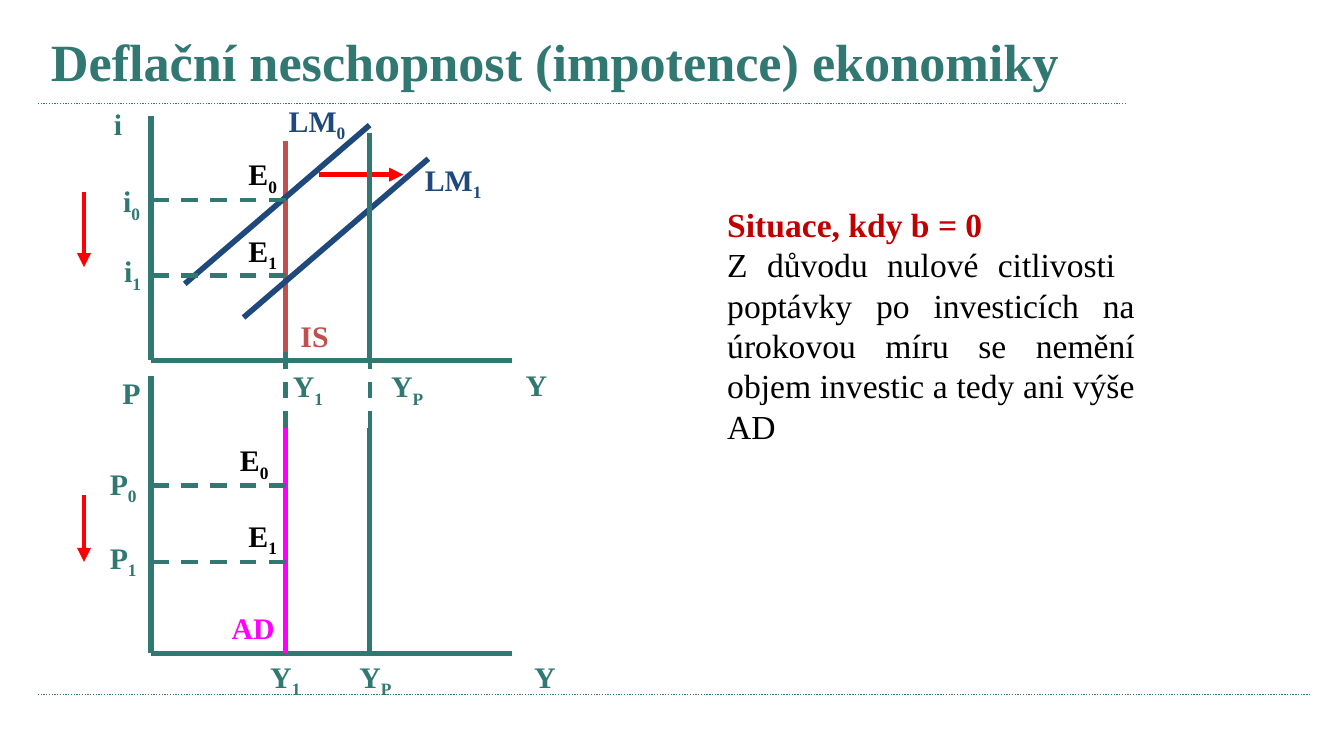
import pptx
import pptx.dml.color
import pptx.enum.dml
import pptx.enum.shapes
import pptx.enum.text
import pptx.oxml
import pptx.oxml.ns
import pptx.util

COLORS = {
    "teal": "307871", "navy": "1F497D", "brick": "C0504D", "magenta": "FF00FF",
    "red": "FF0000", "crimson": "C00000", "black": "000000",
}
FONT = "Times New Roman"
WIDTH, HEIGHT = pptx.util.Inches(10), pptx.util.Inches(5.625)
COLUMNS, ROWS = 160, 90
AXIS_X, AXIS_END, IS_X, POTENTIAL_X, CHANGE_X = 18, 61, 34, 44, 10
RATE_ZERO, RATE_TOP, PRICE_ZERO, PRICE_TOP = 42.9, 13.8, 77.8, 44.8
AD_TOP = 50.9
I0, I1, P0, P1 = 23.8, 32.8, 57.8, 66.9
DASH = pptx.enum.dml.MSO_LINE.DASH
DOTS = pptx.enum.dml.MSO_LINE.ROUND_DOT
LEFT = pptx.enum.text.PP_ALIGN.LEFT
JUSTIFY = pptx.enum.text.PP_ALIGN.JUSTIFY
TOP = pptx.enum.text.MSO_ANCHOR.TOP
MIDDLE = pptx.enum.text.MSO_ANCHOR.MIDDLE


def col(count):
    """Return the horizontal length of a number of grid columns."""
    return round(WIDTH * count / COLUMNS)


def row(count):
    """Return the vertical length of a number of grid rows."""
    return round(HEIGHT * count / ROWS)


def rgb(color):
    """Return the named colour."""
    return pptx.dml.color.RGBColor.from_string(COLORS[color])


def add_line(slide, start, end, color="teal", weight=3, dash=None, arrow=False):
    """Draw a straight line between two grid points."""
    line = slide.shapes.add_connector(
        pptx.enum.shapes.MSO_CONNECTOR.STRAIGHT,
        col(start[0]), row(start[1]), col(end[0]), row(end[1]))
    line.line.color.rgb = rgb(color)
    line.line.width = pptx.util.Pt(weight)
    if dash:
        line.line.dash_style = dash
    if arrow:
        outline = line.line._get_or_add_ln()
        outline.append(pptx.oxml.parse_xml(
            f'<a:tailEnd {pptx.oxml.ns.nsdecls("a")} type="triangle"/>'))
    line._element.spPr.append(
        pptx.oxml.parse_xml(f'<a:effectLst {pptx.oxml.ns.nsdecls("a")}/>'))


def add_text(frame, text, first=True, size=16, color="teal", bold=True, align=LEFT):
    """Write one paragraph, lowering whatever follows an underscore."""
    paragraph = frame.paragraphs[0] if first else frame.add_paragraph()
    paragraph.alignment = align
    base, _, subscript = text.partition("_")
    for part, offset in ((base, None), (subscript, "-25000")):
        if part:
            run = paragraph.add_run()
            run.text = part
            run.font.name = FONT
            run.font.size = pptx.util.Pt(size)
            run.font.bold = bold
            run.font.color.rgb = rgb(color)
            if offset:
                run._r.get_or_add_rPr().set("baseline", offset)


def add_box(slide, left, top, width, height, anchor=TOP):
    """Place a wrapping text box on the grid and return its frame."""
    frame = slide.shapes.add_textbox(
        col(left), row(top), col(width), row(height)).text_frame
    frame.word_wrap = True
    frame.vertical_anchor = anchor
    return frame


def add_label(slide, text, left, top, width=8, color="teal"):
    """Place a short diagram label."""
    add_text(add_box(slide, left, top, width, 5.9), text, color=color)


def draw_axes(slide):
    """Draw the axes of the interest rate and price panels."""
    for top, zero in ((RATE_TOP, RATE_ZERO), (PRICE_TOP, PRICE_ZERO)):
        add_line(slide, (AXIS_X, top), (AXIS_X, zero))
        add_line(slide, (AXIS_X, zero), (AXIS_END, zero))


def draw_curves(slide):
    """Draw the curves, equilibrium levels and shifts."""
    add_line(slide, (IS_X, 16.8), (IS_X, RATE_ZERO), "brick")
    for left, bottom in ((22, 33.8), (29, 37.8)):
        add_line(slide, (left, bottom), (left + 22, bottom - 18.9), "navy")
    add_line(slide, (IS_X, AD_TOP), (IS_X, PRICE_ZERO), "magenta")
    add_line(slide, (38, 20.8), (48, 20.8), "red", 2.5, arrow=True)
    for top, bottom in ((22.9, 31.8), (58.9, P1)):
        add_line(slide, (CHANGE_X, top), (CHANGE_X, bottom), "red", 2.5, arrow=True)
    for top, zero in ((15.8, RATE_ZERO), (AD_TOP, PRICE_ZERO)):
        add_line(slide, (POTENTIAL_X, top), (POTENTIAL_X, zero))
    for level in (I0, I1, P0, P1):
        add_line(slide, (IS_X, level), (AXIS_X, level), weight=2.25, dash=DASH)
    for output, top in ((IS_X, 41.8), (POTENTIAL_X, RATE_ZERO)):
        add_line(slide, (output, AD_TOP), (output, top), weight=2.25, dash=DASH)


def draw_labels(slide):
    """Label the axes, levels, equilibria and curves."""
    for text, left, top in (
            ("i", 12, 11.8), ("i_0", 13.1, 21), ("i_1", 13.2, 29.3),
            ("P", 13, 43.8), ("P_0", 11.5, 54.6), ("P_1", 11.5, 63.4),
            ("Y_1", 33.3, 43), ("Y_P", 45, 43), ("Y", 61, 42.9),
            ("Y_1", 30.6, 77.6), ("Y_P", 41.2, 77.6), ("Y", 62, 77.6)):
        add_label(slide, text, left, top)
    for text, left, top in (("E_0", 28, 17.8), ("E_1", 28, 26.9),
                            ("E_0", 27, 51.8), ("E_1", 28, 60.8)):
        add_label(slide, text, left, top, color="black")
    add_label(slide, "LM_0", 32.8, 11.4, 17, "navy")
    add_label(slide, "LM_1", 49, 18.4, 15, "navy")
    add_label(slide, "IS", 34.2, 37, color="brick")
    add_label(slide, "AD", 26, 71.8, 9, "magenta")


def main():
    """Build and save the slide."""
    deck = pptx.Presentation()
    deck.slide_width, deck.slide_height = WIDTH, HEIGHT
    slide = deck.slides.add_slide(deck.slide_layouts[6])
    for level, end in ((12.3, 134.2), (82.7, 156)):
        add_line(slide, (4.5, level), (end, level), weight=0.75, dash=DOTS)
    title = add_box(slide, 4.5, 2.7, 131.5, 9, MIDDLE)
    add_text(title, "Deflační neschopnost (impotence) ekonomiky", size=28)
    draw_axes(slide)
    draw_curves(slide)
    draw_labels(slide)
    explanation = add_box(slide, 85, 23.5, 51.7, 30.7)
    add_text(explanation, "Situace, kdy b = 0", size=18, color="crimson")
    add_text(
        explanation,
        "Z důvodu nulové citlivosti  poptávky po investicích na úrokovou míru "
        "se nemění objem investic a tedy ani výše AD",
        first=False, size=18, color="black", bold=False, align=JUSTIFY)
    deck.save("out.pptx")


if __name__ == "__main__":
    main()
